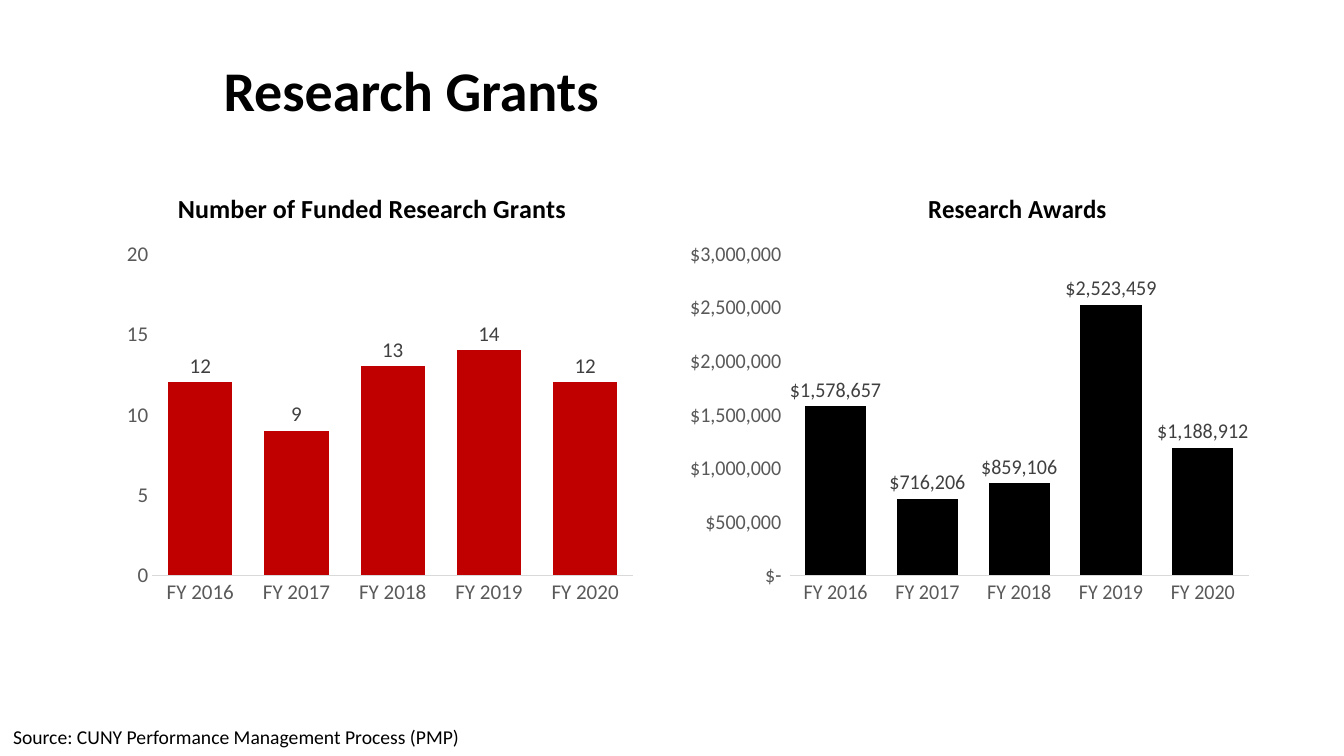
import dataclasses

import lxml.etree
import pptx
import pptx.chart.data
import pptx.dml.color
import pptx.enum.chart
import pptx.enum.text
import pptx.oxml
import pptx.oxml.ns
import pptx.util


@dataclasses.dataclass(frozen=True)
class Theme:
    """Hold the colours, font and type sizes of the slide."""
    font: str = "Calibri"
    ink: str = "000000"
    red: str = "C00000"
    axis: str = "595959"
    label: str = "404040"
    rule: str = "D9D9D9"
    title: float = 40
    chart_title: float = 18.6
    chart_text: float = 15
    source: float = 14


class Deck:
    """Draw elements on one slide, placed by percent of its size."""

    def __init__(self, theme):
        """Open a blank slide."""
        self.theme = theme
        self.prs = pptx.Presentation()
        self.prs.slide_width = pptx.util.Inches(13.33)
        self.prs.slide_height = pptx.util.Inches(7.5)
        self.s = self.prs.slides.add_slide(self.prs.slide_layouts[6])

    def box(self, x, y, w, h):
        """Turn percentages of the slide into lengths."""
        across, down = self.prs.slide_width / 100, self.prs.slide_height / 100
        return int(x * across), int(y * down), int(w * across), int(h * down)

    def style(self, font, size, color, bold=False):
        """Format a font."""
        fmt = {"name": self.theme.font, "size": pptx.util.Pt(size), "bold": bold}
        for key, value in fmt.items():
            setattr(font, key, value)
        font.color.rgb = pptx.dml.color.RGBColor.from_string(color)

    def text(self, words, place, size, bold=False, **frame):
        """Add a one-line text box."""
        tf = self.s.shapes.add_textbox(*self.box(*place)).text_frame
        for key, value in frame.items():
            setattr(tf, key, value)
        p = tf.paragraphs[0]
        r = p.add_run()
        r.text = words
        self.style(r.font, size, self.theme.ink, bold)
        return p

    def layout(self, x, y, w=None, h=None):
        """Build a manual chart layout element."""
        parts = {"layoutTarget": "inner"} if w else {}
        parts.update(xMode="edge", yMode="edge", x=x, y=y)
        if w:
            parts.update(w=w, h=h)
        qn = pptx.oxml.ns.qn
        node = pptx.oxml.parse_xml(f'<c:layout {pptx.oxml.ns.nsdecls("c")}/>')
        manual = lxml.etree.SubElement(node, qn("c:manualLayout"))
        for tag, value in parts.items():
            lxml.etree.SubElement(manual, qn(f"c:{tag}")).set("val", str(value))
        return node

    def place(self, parent, node, index):
        """Put a layout into a chart part in place of any other."""
        for old in parent.findall(pptx.oxml.ns.qn("c:layout")):
            parent.remove(old)
        parent.insert(index, node)

    def columns(self, title, title_x, left, years, values, color, scale, axis_format, label_format):
        """Add a column chart with a title and value labels."""
        t = self.theme
        data = pptx.chart.data.CategoryChartData()
        data.categories = years
        data.add_series("Series 1", values)
        kind = pptx.enum.chart.XL_CHART_TYPE.COLUMN_CLUSTERED
        chart = self.s.shapes.add_chart(kind, *self.box(left, 21.73, 44.41, 71.07), data).chart
        self.style(chart.font, t.chart_text, t.axis)
        chart.has_legend = False

        chart.has_title = True
        p = chart.chart_title.text_frame.paragraphs[0]
        r = p.add_run()
        r.text = title
        self.style(r.font, t.chart_title, t.ink, True)
        chart.chart_title.include_in_layout = False
        self.place(chart.chart_title._element, self.layout(title_x, 0.04), 1)

        none = pptx.enum.chart.XL_TICK_MARK.NONE
        for axis in (chart.category_axis, chart.value_axis):
            fmt = {"has_major_gridlines": False, "major_tick_mark": none, "minor_tick_mark": none}
            for key, value in fmt.items():
                setattr(axis, key, value)
            self.style(axis.tick_labels.font, t.chart_text, t.axis)
        line = chart.category_axis.format.line
        line.width = pptx.util.Pt(0.75)
        line.color.rgb = pptx.dml.color.RGBColor.from_string(t.rule)
        chart.value_axis.format.line.fill.background()
        fmt = {"minimum_scale": 0, "maximum_scale": scale[0], "major_unit": scale[1]}
        for key, value in fmt.items():
            setattr(chart.value_axis, key, value)

        plot = chart.plots[0]
        fmt = {"gap_width": 50, "overlap": -50, "vary_by_categories": False, "has_data_labels": True}
        for key, value in fmt.items():
            setattr(plot, key, value)
        fill = plot.series[0].format.fill
        fill.solid()
        fill.fore_color.rgb = pptx.dml.color.RGBColor.from_string(color)
        labels = plot.data_labels
        labels.show_value = True
        labels.position = pptx.enum.chart.XL_LABEL_POSITION.OUTSIDE_END
        self.style(labels.font, t.chart_text, t.label)
        for target, code in ((chart.value_axis.tick_labels, axis_format), (labels, label_format)):
            target.number_format = code
            target.number_format_is_linked = False
        area = chart._chartSpace.chart.plotArea
        self.place(area, self.layout(0.135, 0.167, 0.806, 0.598), 0)


def main():
    """Build and save the slide."""
    theme = Theme()
    deck = Deck(theme)
    years = [f"FY {year}" for year in range(2016, 2021)]
    dollars = r'_("$"* #,##0_);_("$"* \(#,##0\);_("$"* "-"_);_(@_)'
    middle = pptx.enum.text.MSO_ANCHOR.MIDDLE
    p = deck.text("Research Grants", (15.9, 5.33, 77.27, 14.13), theme.title, True,
                  word_wrap=True, vertical_anchor=middle)
    p.line_spacing = 0.9
    deck.columns("Number of Funded Research Grants", 0.17, 5.33, years, (12, 9, 13, 14, 12),
                 theme.red, (20, 5), "#,##0", "0")
    deck.columns("Research Awards", 0.37, 51.01, years,
                 (1578657, 716206, 859106, 2523459, 1188912),
                 theme.ink, (3000000, 500000), dollars, dollars)
    deck.text("Source: CUNY Performance Management Process (PMP)", (0.23, 95.2, 35.03, 4.53),
              theme.source, word_wrap=False,
              auto_size=pptx.enum.text.MSO_AUTO_SIZE.SHAPE_TO_FIT_TEXT)
    deck.prs.save("out.pptx")


if __name__ == "__main__":
    main()
